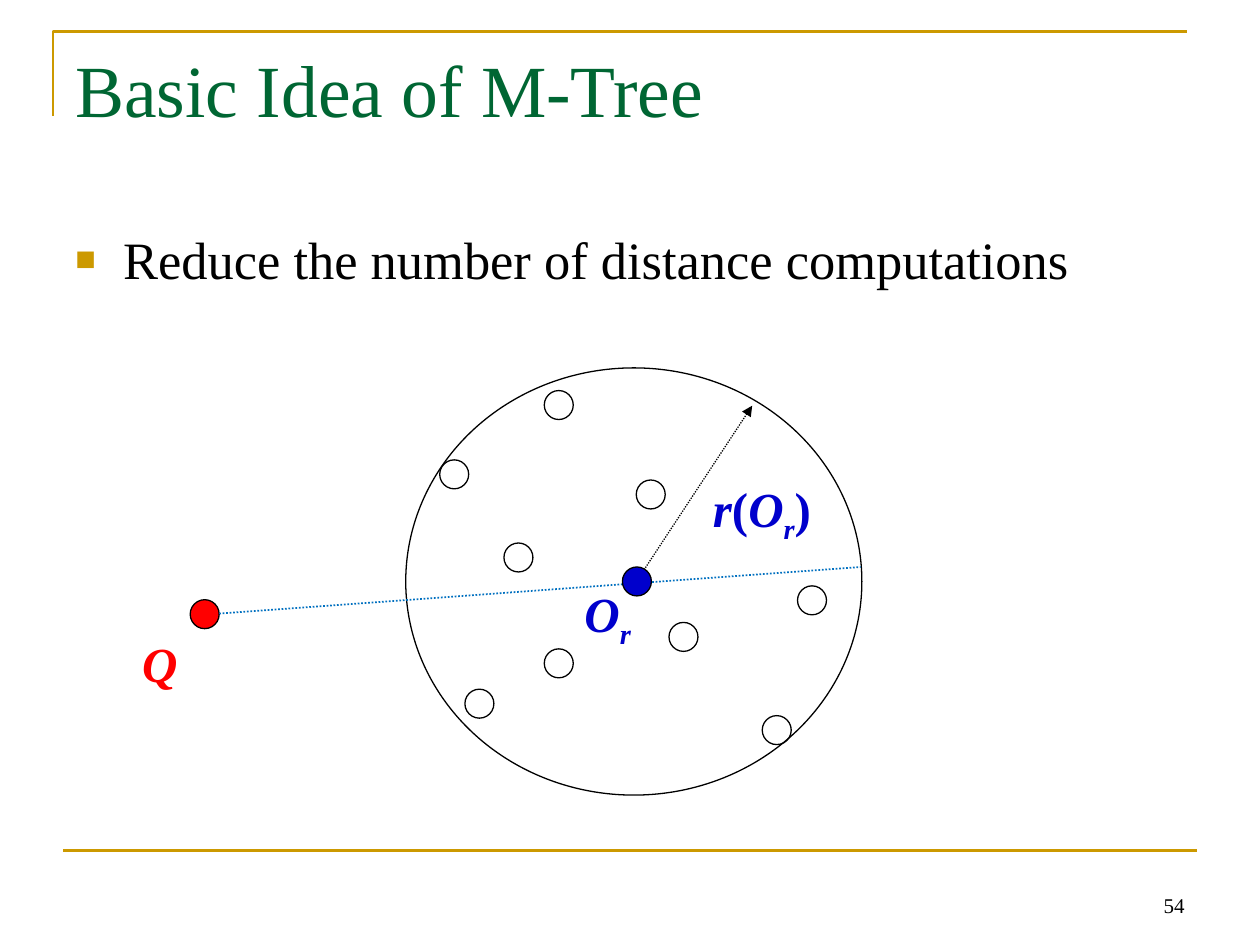
from dataclasses import dataclass

from lxml import etree
from pptx import Presentation
from pptx.dml.color import RGBColor
from pptx.enum.dml import MSO_LINE
from pptx.enum.shapes import MSO_CONNECTOR, MSO_SHAPE
from pptx.enum.text import MSO_ANCHOR, PP_ALIGN
from pptx.oxml.ns import qn
from pptx.util import Inches, Pt

STRAIGHT = MSO_CONNECTOR.STRAIGHT
ELLIPSE = MSO_SHAPE.OVAL
DOTTED = MSO_LINE.ROUND_DOT
TOP, BOTTOM = MSO_ANCHOR.TOP, MSO_ANCHOR.BOTTOM
LEFT, RIGHT = PP_ALIGN.LEFT, PP_ALIGN.RIGHT

# The slide is a grid of 100 columns by 75 rows
COLUMNS, ROWS = 100, 75
CELL = Inches(0.1)
DOT = 2.3
FONT = "Times New Roman"
COLORS = {
    "gold": "CC9900",
    "green": "006633",
    "black": "000000",
    "center": "0000CC",
    "query": "FF0000",
    "ray": "0070C0",
}


@dataclass(frozen=True)
class Run:
    text: str
    italic: bool = False
    subscript: bool = False


@dataclass(frozen=True)
class TextBlock:
    column: float
    row: float
    width: float
    height: float
    runs: tuple[Run, ...]
    size: float
    color: str
    bold: bool = False
    anchor: MSO_ANCHOR = TOP
    align: PP_ALIGN = LEFT
    wrap: bool = True


@dataclass(frozen=True)
class Segment:
    start: tuple[float, float]
    end: tuple[float, float]
    color: str
    width: float
    dotted: bool = False
    arrow: bool = False


def grid(cells: float) -> int:
    return round(cells * CELL)


def rgb(name: str) -> RGBColor:
    return RGBColor.from_string(COLORS[name])


def add_text(slide, block: TextBlock):
    box = slide.shapes.add_textbox(
        *map(grid, (block.column, block.row, block.width, block.height)))
    frame = box.text_frame
    frame.word_wrap = block.wrap
    frame.vertical_anchor = block.anchor
    paragraph = frame.paragraphs[0]
    paragraph.alignment = block.align
    for part in block.runs:
        run = paragraph.add_run()
        run.text = part.text
        font = run.font
        font.name, font.size = FONT, Pt(block.size)
        font.bold, font.italic = block.bold, part.italic
        font.color.rgb = rgb(block.color)
        if part.subscript:
            run.font._element.set("baseline", "-25000")
    return paragraph


def add_bullet(paragraph) -> None:
    paragraph.space_before = Pt(6)
    properties = paragraph._p.get_or_add_pPr()
    properties.set("marL", str(Inches(0.38)))
    properties.set("indent", str(-Inches(0.38)))
    color = etree.SubElement(properties, qn("a:buClr"))
    etree.SubElement(color, qn("a:srgbClr"), val=COLORS["gold"])
    etree.SubElement(properties, qn("a:buSzPct"), val="65000")
    etree.SubElement(properties, qn("a:buFont"), typeface="Arial")
    etree.SubElement(properties, qn("a:buChar"), char="■")


def add_segment(slide, segment: Segment) -> None:
    connector = slide.shapes.add_connector(
        STRAIGHT, *map(grid, segment.start + segment.end))
    line = connector.line
    line.color.rgb = rgb(segment.color)
    line.width = Pt(segment.width)
    if segment.dotted:
        line.dash_style = DOTTED
    if segment.arrow:
        etree.SubElement(line._get_or_add_ln(), qn("a:tailEnd"), type="triangle")
    etree.SubElement(connector._element.spPr, qn("a:effectLst"))


def add_ellipse(slide, column: float, row: float, width: float = DOT,
                height: float = DOT, fill: str | None = None) -> None:
    shape = slide.shapes.add_shape(
        ELLIPSE, *map(grid, (column, row, width, height)))
    shape.shadow.inherit = False
    if fill:
        shape.fill.solid()
        shape.fill.fore_color.rgb = rgb(fill)
    else:
        shape.fill.background()
    shape.line.color.rgb = rgb("black")
    shape.line.width = Pt(0.75)


def add_title_corner(slide) -> None:
    builder = slide.shapes.build_freeform(grid(4.2), grid(9.2))
    builder.add_line_segments(
        [(grid(4.2), grid(2.5)), (grid(94.2), grid(2.5))], close=False)
    corner = builder.convert_to_shape()
    corner.shadow.inherit = False
    corner.fill.background()
    corner.line.color.rgb = rgb("gold")
    corner.line.width = Pt(1.5)


FOOTER_RULE = Segment((5, 67.5), (95, 67.5), "gold", 1.5)
RADIUS = Segment((51, 45.4), (59.7, 32.2), "black", 0.75, True, True)
QUERY_RAY = Segment((17.4, 48.7), (68.3, 45), "ray", 1, True)

TITLE = TextBlock(5, 3, 90, 12.5, (Run("Basic Idea of M-Tree"),), 42, "green")
BODY = TextBlock(5, 17.5, 90, 49.5,
                 (Run("Reduce the number of distance computations"),), 30, "black")
PAGE_NUMBER = TextBlock(71.7, 68.3, 23.3, 5, (Run("54"),), 12, "black",
                        anchor=BOTTOM, align=RIGHT)

CENTER_NAME = (Run("O", True), Run("r", True, True))
LABELS = (
    TextBlock(45.4, 45.8, 7.1, 5.7, CENTER_NAME, 28, "center", True, wrap=False),
    TextBlock(55.6, 37.5, 10.8, 5.7,
              (Run("r", True), Run("("), *CENTER_NAME, Run(")")),
              28, "center", True, wrap=False),
    TextBlock(10.3, 49.8, 7.1, 5.7, (Run("Q", True),), 28, "query", True, wrap=False),
)

# Column and row of each object inside the covering circle
OBJECTS = (
    (43.2, 31), (40, 43.1), (50.5, 38.1), (63.3, 46.5), (60.5, 56.8),
    (34.9, 36.5), (43.2, 51.5), (53.1, 49.4), (36.9, 54.7),
)


def main() -> None:
    presentation = Presentation()
    presentation.slide_width = grid(COLUMNS)
    presentation.slide_height = grid(ROWS)
    slide = presentation.slides.add_slide(presentation.slide_layouts[6])

    # Frame, title and bullet
    add_title_corner(slide)
    add_segment(slide, FOOTER_RULE)
    add_text(slide, TITLE)
    add_bullet(add_text(slide, BODY))

    # Covering circle with its radius and objects
    add_ellipse(slide, 32.2, 29.2, 36.2, 33.9)
    add_segment(slide, RADIUS)
    for label in LABELS:
        add_text(slide, label)
    for column, row in OBJECTS:
        add_ellipse(slide, column, row)

    # Query object, its ray and the routing object
    add_ellipse(slide, 15.1, 47.6, fill="query")
    add_segment(slide, QUERY_RAY)
    add_ellipse(slide, 49.4, 45, fill="center")

    add_text(slide, PAGE_NUMBER)
    presentation.save("out.pptx")


if __name__ == "__main__":
    main()
